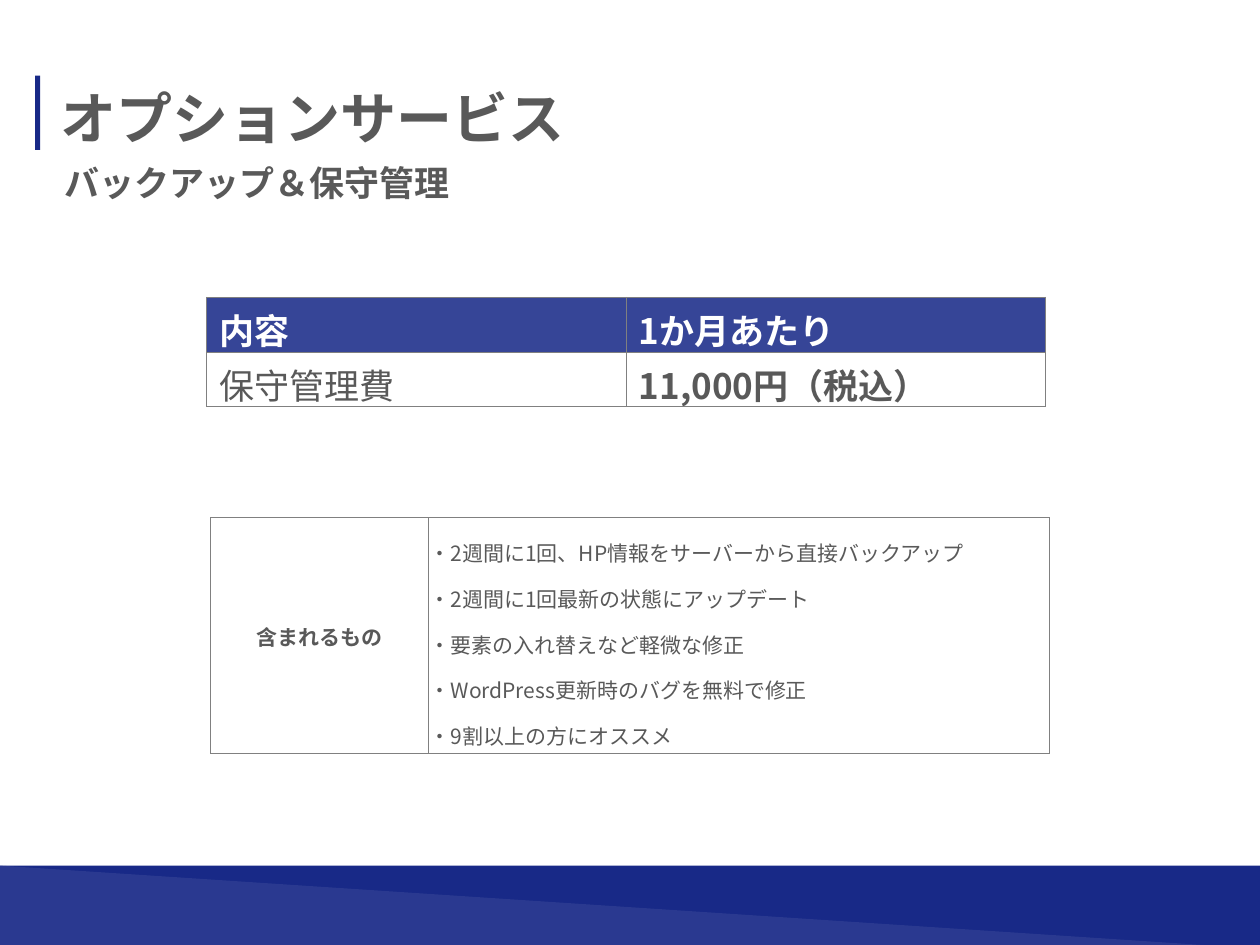
from lxml import etree
from pptx import Presentation
from pptx.dml.color import RGBColor
from pptx.enum.shapes import MSO_SHAPE
from pptx.enum.text import MSO_ANCHOR, PP_ALIGN
from pptx.oxml import parse_xml
from pptx.oxml.ns import qn
from pptx.util import Inches, Pt

FONT = "Noto Sans CJK JP"
NAVY, BLUE, GRAY, WHITE = "182987", "364597", "595959", "FFFFFF"
NS = "http://schemas.openxmlformats.org/drawingml/2006/main"


def color(value):
    return RGBColor.from_string(value)


def write(tf, lines, size, c=GRAY, bold=True, align=PP_ALIGN.LEFT, spacing=1.0):
    for i, line in enumerate(lines):
        p = tf.paragraphs[0] if i == 0 else tf.add_paragraph()
        for name, value in {"alignment": align, "line_spacing": spacing,
                            "space_before": Pt(0)}.items():
            setattr(p, name, value)
        r = p.add_run()
        r.text = line
        for name, value in {"name": FONT, "size": Pt(size), "bold": bold}.items():
            setattr(r.font, name, value)
        r.font.color.rgb = color(c)
        etree.SubElement(r.font._element, qn("a:ea"), typeface=FONT)


prs = Presentation()
prs.slide_width, prs.slide_height = Inches(10), Inches(7.5)
s = prs.slides.add_slide(prs.slide_layouts[5])

# Title bar and footer bands
for kind, box, fill in [
    (MSO_SHAPE.RECTANGLE, (0.28, 0.6, 0.04, 0.59), NAVY),
    (MSO_SHAPE.RECTANGLE, (0, 6.87, 10, 0.66), NAVY),
    (MSO_SHAPE.RIGHT_TRIANGLE, (0, 6.87, 10, 0.66), BLUE),
]:
    sp = s.shapes.add_shape(kind, *map(Inches, box))
    sp.shadow.inherit = False
    sp.fill.solid()
    sp.fill.fore_color.rgb = color(fill)
    sp.line.fill.background()
# The last band is see-through
clr = sp._element.spPr.find(qn("a:solidFill"))[0]
etree.SubElement(clr, qn("a:alpha"), val="60000")

# Title and subtitle
title = s.shapes.title
subtitle = s.shapes.add_textbox(0, 0, 0, 0)
for sp, box, text, size in [
    (title, (0.38, 0.61, 6.83, 0.64), "オプションサービス", 32),
    (subtitle, (0.41, 1.23, 3.69, 0.44), "バックアップ＆保守管理", 20),
]:
    sp.left, sp.top, sp.width, sp.height = map(Inches, box)
    sp.text_frame.word_wrap = True
    sp.text_frame.vertical_anchor = MSO_ANCHOR.TOP
    write(sp.text_frame, [text], size)

# Price table and table of what is included
price_rows = [
    [(["内容"], dict(size=20, c=WHITE), BLUE),
     (["1か月あたり"], dict(size=20, c=WHITE), BLUE)],
    [(["保守管理費"], dict(size=20, bold=False), WHITE),
     (["11,000円（税込）"], dict(size=20), WHITE)],
]
services = [
    "・2週間に1回、HP情報をサーバーから直接バックアップ",
    "・2週間に1回最新の状態にアップデート",
    "・要素の入れ替えなど軽微な修正",
    "・WordPress更新時のバグを無料で修正",
    "・9割以上の方にオススメ",
]
included_rows = [
    [(["含まれるもの"], dict(size=12, align=PP_ALIGN.CENTER), None),
     (services, dict(size=12, bold=False, spacing=1.5), None)],
]
tight = {"margin_left": Inches(0.01), "margin_right": Inches(0.01),
         "margin_top": Inches(0.01), "margin_bottom": 0,
         "vertical_anchor": MSO_ANCHOR.MIDDLE}

for rows, left, top, widths, height, layout in [
    (price_rows, 1.64, 2.36, (3.33, 3.33), 0.87, {}),
    (included_rows, 1.67, 4.11, (1.73, 4.93), 1.87, tight),
]:
    table = s.shapes.add_table(len(rows), 2, Inches(left), Inches(top),
                               Inches(sum(widths)), Inches(height)).table
    table.first_row = table.horz_banding = False
    for col, width in zip(table.columns, widths):
        col.width = Inches(width)
    for i, row in enumerate(rows):
        for j, (lines, style, fill) in enumerate(row):
            cell = table.cell(i, j)
            for name, value in layout.items():
                setattr(cell, name, value)
            write(cell.text_frame, lines, **style)
            if fill:
                cell.fill.solid()
                cell.fill.fore_color.rgb = color(fill)
            else:
                cell.fill.background()
            # Borders come before the fill
            for k, side in enumerate(("lnL", "lnR", "lnT", "lnB")):
                cell._tc.get_or_add_tcPr().insert(k, parse_xml(
                    f'<a:{side} xmlns:a="{NS}" w="6350"><a:solidFill>'
                    f'<a:srgbClr val="808080"/></a:solidFill></a:{side}>'))

prs.save("out.pptx")
